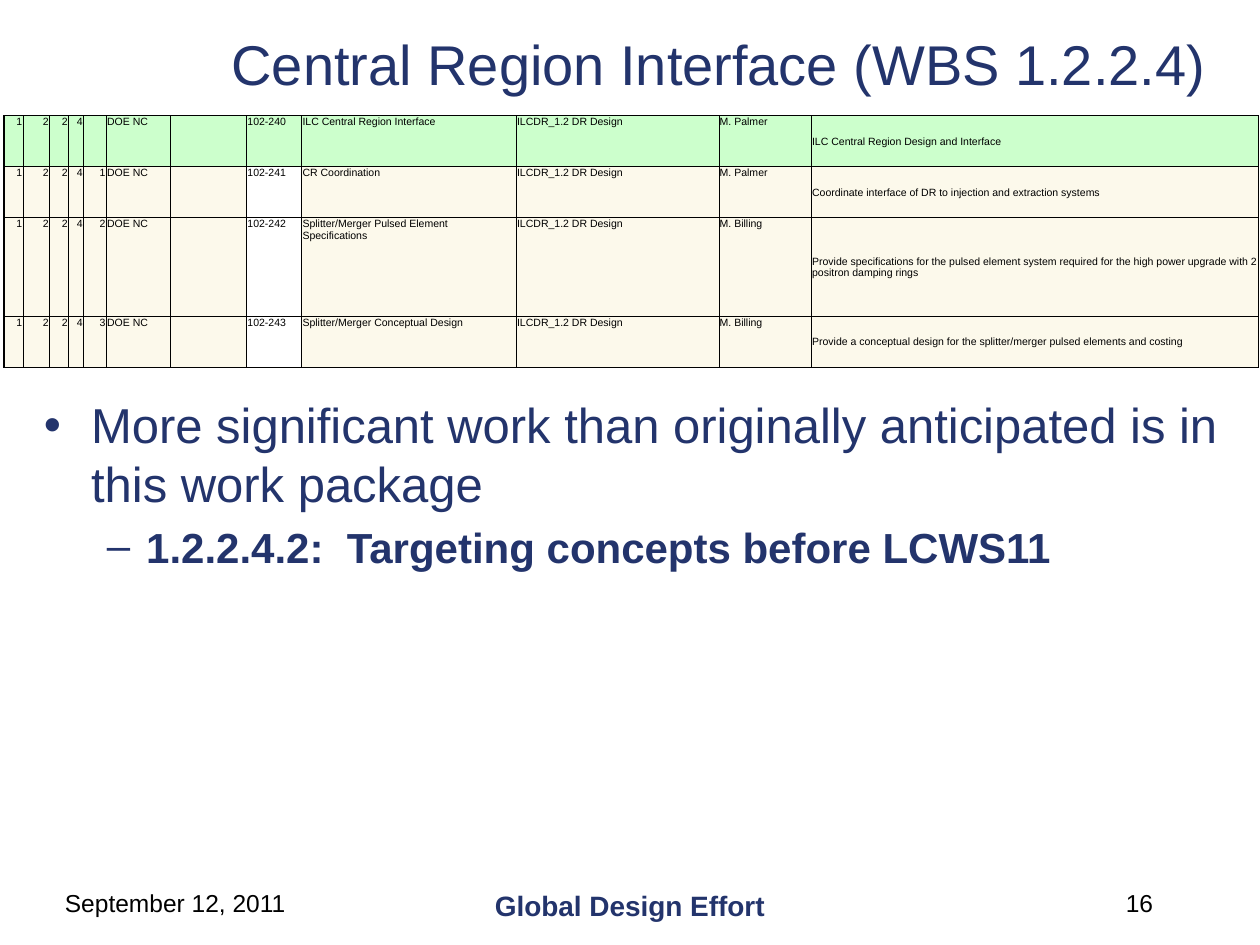
from dataclasses import dataclass
from typing import Optional

import pptx
import pptx.dml.color
import pptx.enum.text
import pptx.oxml
import pptx.oxml.ns
import pptx.util

Pt = pptx.util.Pt
RGB = pptx.dml.color.RGBColor
ALIGN = pptx.enum.text.PP_ALIGN
ANCHOR = pptx.enum.text.MSO_ANCHOR
NS = pptx.oxml.ns.nsdecls("a")


@dataclass(frozen=True)
class Theme:
    face: str = "Arial"
    navy: str = "23346C"
    black: str = "000000"
    white: str = "FFFFFF"
    green: str = "CCFFCC"
    cream: str = "FCF9EB"
    title: float = 32
    body: float = 28
    sub: float = 24
    effort: float = 16
    foot: float = 14
    cell: float = 6
    thin: float = 0.5
    thick: float = 1


@dataclass(frozen=True)
class Line:
    text: str
    size: float
    color: str
    bold: bool = False
    align: ALIGN = ALIGN.LEFT
    bullet: Optional[str] = None
    left: float = 0
    hang: float = 0
    before: float = 0


@dataclass(frozen=True)
class Box:
    x: float
    y: float
    w: float
    h: float
    lines: tuple[Line, ...]
    anchor: ANCHOR = ANCHOR.TOP


THEME = Theme()

BOXES = (
    # Title
    Box(102, 0, 618, 72, (
        Line("Central Region Interface (WBS 1.2.2.4)", THEME.title, THEME.navy,
             align=ALIGN.CENTER),), ANCHOR.MIDDLE),
    # Bullets
    Box(18, 222, 690, 276, (
        Line("More significant work than originally anticipated is in this work package",
             THEME.body, THEME.navy, bullet="•", left=27, hang=27),
        Line("1.2.2.4.2:  Targeting concepts before LCWS11", THEME.sub, THEME.navy,
             True, bullet="–", left=58.5, hang=22.5, before=5))),
    # Footer
    Box(30, 504, 192, 36, (
        Line("September 12, 2011", THEME.foot, THEME.black),)),
    Box(246, 504, 228, 36, (
        Line("Global Design Effort", THEME.effort, THEME.navy, True, ALIGN.CENTER),)),
    Box(516, 504, 150, 36, (
        Line("16", THEME.foot, THEME.black, align=ALIGN.RIGHT),)),
)

# Work packages: last WBS digit, number, name, owner, scope
TASKS = (
    ("", "102-240", "ILC Central Region Interface", "M. Palmer",
     "ILC Central Region Design and Interface"),
    ("1", "102-241", "CR Coordination", "M. Palmer",
     "Coordinate interface of DR to injection and extraction systems"),
    ("2", "102-242", "Splitter/Merger Pulsed Element Specifications", "M. Billing",
     "Provide specifications for the pulsed element system required for the "
     "high power upgrade with 2 positron damping rings"),
    ("3", "102-243", "Splitter/Merger Conceptual Design", "M. Billing",
     "Provide a conceptual design for the splitter/merger pulsed elements and costing"),
)
COLS = (10.9, 15.2, 10.9, 8.6, 13, 36.9, 43.3, 31.5, 122.6, 115.8, 52.8, 255.6)
ROWS = (29.2, 29.2, 56.4, 29.2)
DIGITS = 5
NUMBER = 7
LAST = len(COLS) - 1


def style(run, size: float, color: str, bold: bool = False) -> None:
    run.font.name = THEME.face
    run.font.size = Pt(size)
    run.font.bold = bold
    run.font.color.rgb = RGB.from_string(color)


def draw_box(slide, box: Box) -> None:
    shape = slide.shapes.add_textbox(Pt(box.x), Pt(box.y), Pt(box.w), Pt(box.h))
    frame = shape.text_frame
    frame.word_wrap = True
    frame.vertical_anchor = box.anchor
    frame.text = "\n".join(line.text for line in box.lines)
    for para, line in zip(frame.paragraphs, box.lines):
        para.alignment = line.align
        if line.before:
            para.space_before = Pt(line.before)
        if line.bullet:
            props = para._p.get_or_add_pPr()
            props.set("marL", str(Pt(line.left)))
            props.set("indent", str(-Pt(line.hang)))
            props.append(pptx.oxml.parse_xml(
                f'<a:buFont {NS} typeface="{THEME.face}"/>'))
            props.append(pptx.oxml.parse_xml(
                f'<a:buChar {NS} char="{line.bullet}"/>'))
        style(para.runs[0], line.size, line.color, line.bold)


def add_edges(cell, col: int) -> None:
    props = cell._tc.get_or_add_tcPr()
    outer = {"L": col == 0, "R": col == LAST}
    for spot, side in enumerate("LRTB"):
        width = THEME.thick if outer.get(side) else THEME.thin
        props.insert(spot, pptx.oxml.parse_xml(
            f'<a:ln{side} {NS} w="{Pt(width)}"><a:solidFill>'
            f'<a:srgbClr val="{THEME.black}"/></a:solidFill></a:ln{side}>'))


def fill_cell(cell, text: str, row: int, col: int) -> None:
    cell.margin_left = cell.margin_right = cell.margin_top = Pt(0.5)
    cell.margin_bottom = 0
    cell.vertical_anchor = ANCHOR.MIDDLE if col == LAST else ANCHOR.TOP
    if row == 0:
        color = THEME.green
    else:
        color = THEME.white if col == NUMBER else THEME.cream
    cell.fill.solid()
    cell.fill.fore_color.rgb = RGB.from_string(color)
    add_edges(cell, col)
    para = cell.text_frame.paragraphs[0]
    para.text = text
    para.alignment = ALIGN.RIGHT if col < DIGITS else ALIGN.LEFT
    para.font.size = Pt(THEME.cell)
    for run in para.runs:
        style(run, THEME.cell, THEME.black)


def draw_table(slide) -> None:
    frame = slide.shapes.add_table(len(ROWS), len(COLS), Pt(2.2), Pt(66),
                                   Pt(sum(COLS)), Pt(sum(ROWS)))
    table = frame.table
    table.first_row = table.horz_banding = False
    for col, width in zip(table.columns, COLS):
        col.width = Pt(width)
    for row, height in zip(table.rows, ROWS):
        row.height = Pt(height)
    for r, (digit, number, name, owner, scope) in enumerate(TASKS):
        texts = ("1", "2", "2", "4", digit, "DOE NC", "", number, name,
                 "ILCDR_1.2 DR Design", owner, scope)
        for c, text in enumerate(texts):
            fill_cell(table.cell(r, c), text, r, c)


def main() -> None:
    deck = pptx.Presentation()
    deck.slide_width, deck.slide_height = Pt(720), Pt(540)
    slide = deck.slides.add_slide(deck.slide_layouts[6])
    for box in BOXES:
        draw_box(slide, box)
    draw_table(slide)
    deck.save("out.pptx")


if __name__ == "__main__":
    main()
